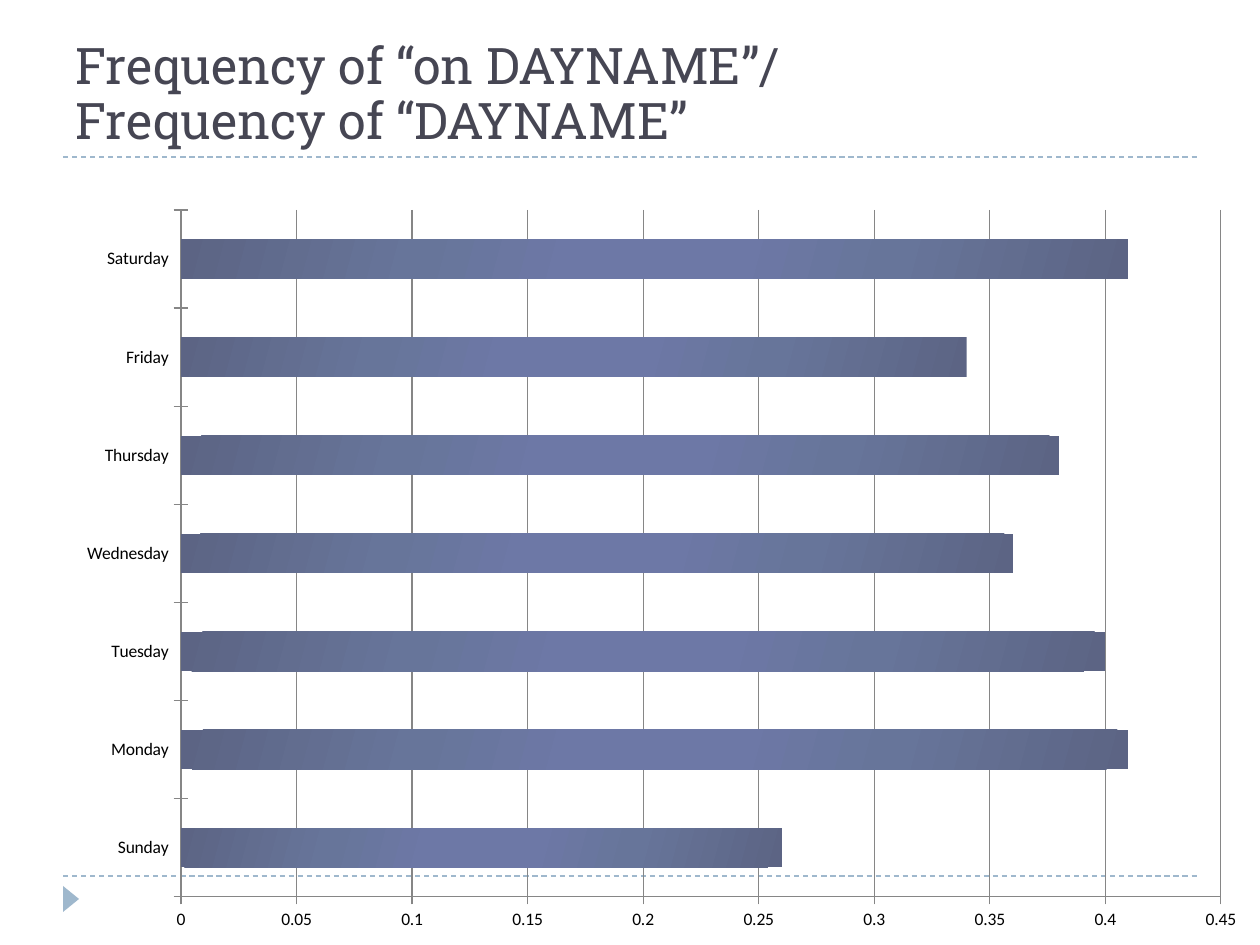
from dataclasses import dataclass

from lxml import etree
from pptx import Presentation
from pptx.chart.data import CategoryChartData
from pptx.dml.color import RGBColor
from pptx.enum.chart import XL_CHART_TYPE, XL_TICK_MARK
from pptx.enum.dml import MSO_LINE
from pptx.enum.shapes import MSO_CONNECTOR, MSO_SHAPE
from pptx.enum.text import MSO_ANCHOR
from pptx.oxml import parse_xml
from pptx.oxml.ns import nsdecls, qn
from pptx.util import Pt

BAR_CLUSTERED = XL_CHART_TYPE.BAR_CLUSTERED
CROSS = XL_TICK_MARK.CROSS
NO_TICK = XL_TICK_MARK.NONE
DASH = MSO_LINE.DASH
STRAIGHT = MSO_CONNECTOR.STRAIGHT
TRIANGLE = MSO_SHAPE.ISOSCELES_TRIANGLE
BOTTOM = MSO_ANCHOR.BOTTOM

PX_PER_INCH = 126
ACCENT = "9FB8CD"
TITLE_COLOR = "464653"
AXIS_COLOR = "868686"
BAR_STOPS = ((0, "5C6484"), (25, "67759A"), (42, "6D78A6"),
             (58, "6D78A6"), (75, "67759A"), (100, "5C6484"))
TITLE_LINES = ("Frequency of “on DAYNAME”/", "Frequency of “DAYNAME”")
DAY_SHARES = {
    "Sunday": 0.26, "Monday": 0.41, "Tuesday": 0.4, "Wednesday": 0.36,
    "Thursday": 0.38, "Friday": 0.34, "Saturday": 0.41,
}


@dataclass(frozen=True)
class Box:
    left: int
    top: int
    width: int
    height: int

    def emu(self):
        return [px(n) for n in (self.left, self.top, self.width, self.height)]


@dataclass(frozen=True)
class Rule:
    left: int
    right: int
    y: int


RULES = (Rule(63, 1197, 876), Rule(63, 1197, 157))
MARKER = Box(58, 891, 26, 16)
TITLE = Box(63, 31, 1134, 126)
CHART = Box(63, 195, 1197, 750)
PLOT = Box(181, 210, 1040, 687)


def px(length: int) -> int:
    return round(length * 914400 / PX_PER_INCH)


def color(hex_code: str) -> RGBColor:
    return RGBColor.from_string(hex_code)


def draw_rule(slide, rule: Rule) -> None:
    line = slide.shapes.add_connector(
        STRAIGHT, px(rule.left), px(rule.y), px(rule.right), px(rule.y))
    line.line.color.rgb = color(ACCENT)
    line.line.width = Pt(0.75)
    line.line.dash_style = DASH
    etree.SubElement(line._element.spPr, qn("a:effectLst"))


def draw_marker(slide, box: Box) -> None:
    marker = slide.shapes.add_shape(TRIANGLE, *box.emu())
    marker.rotation = 90
    marker.shadow.inherit = False
    marker.fill.solid()
    marker.fill.fore_color.rgb = color(ACCENT)
    marker.line.fill.background()


def draw_title(slide, box: Box) -> None:
    frame = slide.shapes.add_textbox(*box.emu()).text_frame
    frame.word_wrap = True
    frame.vertical_anchor = BOTTOM
    paragraph = frame.paragraphs[0]
    paragraph.line_spacing = 0.92
    for index, words in enumerate(TITLE_LINES):
        if index:
            paragraph.add_line_break()
        run = paragraph.add_run()
        run.text = words
        run.font.name = "Roboto Slab"
        run.font.size = Pt(28.8)
        run.font.color.rgb = color(TITLE_COLOR)


def shade_bars(series) -> None:
    """Give the bars a gradient that is darker at both ends."""
    series.format.fill.solid()
    bar_properties = series._element.spPr
    solid = bar_properties.find(qn("a:solidFill"))
    stops = "".join(
        f'<a:gs pos="{percent * 1000}"><a:srgbClr val="{shade}"/></a:gs>'
        for percent, shade in BAR_STOPS)
    bar_properties.replace(solid, parse_xml(
        f'<a:gradFill {nsdecls("a")} rotWithShape="1"><a:gsLst>{stops}</a:gsLst>'
        '<a:lin ang="900000" scaled="1"/></a:gradFill>'))


def place_plot(chart, plot: Box, frame: Box) -> None:
    """Fix the inner plot area inside the chart frame."""
    shares = {
        "x": (plot.left - frame.left) / frame.width,
        "y": (plot.top - frame.top) / frame.height,
        "w": plot.width / frame.width,
        "h": plot.height / frame.height,
    }
    modes = '<c:xMode val="edge"/><c:yMode val="edge"/>'
    sizes = "".join(f'<c:{key} val="{share:.4f}"/>' for key, share in shares.items())
    plot_area = chart._chartSpace.chart.plotArea
    for layout in plot_area.findall(qn("c:layout")):
        plot_area.remove(layout)
    plot_area.insert(0, parse_xml(
        f'<c:layout {nsdecls("c")}><c:manualLayout><c:layoutTarget val="inner"/>'
        f'{modes}{sizes}</c:manualLayout></c:layout>'))


def draw_chart(slide, box: Box) -> None:
    frequencies = CategoryChartData()
    frequencies.categories = list(DAY_SHARES)
    frequencies.add_series("Series 1", list(DAY_SHARES.values()))
    chart = slide.shapes.add_chart(BAR_CLUSTERED, *box.emu(), frequencies).chart
    chart.has_legend = False
    chart.has_title = False
    chart.font.name = "Calibri"
    chart.font.size = Pt(10)
    chart.font.color.rgb = color("000000")

    bars = chart.plots[0]
    bars.gap_width = 150
    bars.vary_by_categories = False
    shade_bars(bars.series[0])

    for axis in (chart.category_axis, chart.value_axis):
        axis.major_tick_mark = CROSS
        axis.minor_tick_mark = NO_TICK
        axis.format.line.color.rgb = color(AXIS_COLOR)
        axis.format.line.width = Pt(0.75)
    chart.category_axis.has_major_gridlines = False
    values = chart.value_axis
    values.minimum_scale, values.maximum_scale, values.major_unit = 0, 0.45, 0.05
    values.tick_labels.number_format = "General"
    values.tick_labels.number_format_is_linked = False
    values.has_major_gridlines = True
    values.major_gridlines.format.line.color.rgb = color(AXIS_COLOR)
    values.major_gridlines.format.line.width = Pt(0.75)
    place_plot(chart, PLOT, box)


def main() -> None:
    presentation = Presentation()
    presentation.slide_width = px(1260)
    presentation.slide_height = px(945)
    slide = presentation.slides.add_slide(presentation.slide_layouts[6])
    for rule in RULES:
        draw_rule(slide, rule)
    draw_marker(slide, MARKER)
    draw_title(slide, TITLE)
    draw_chart(slide, CHART)
    presentation.save("out.pptx")


if __name__ == "__main__":
    main()
